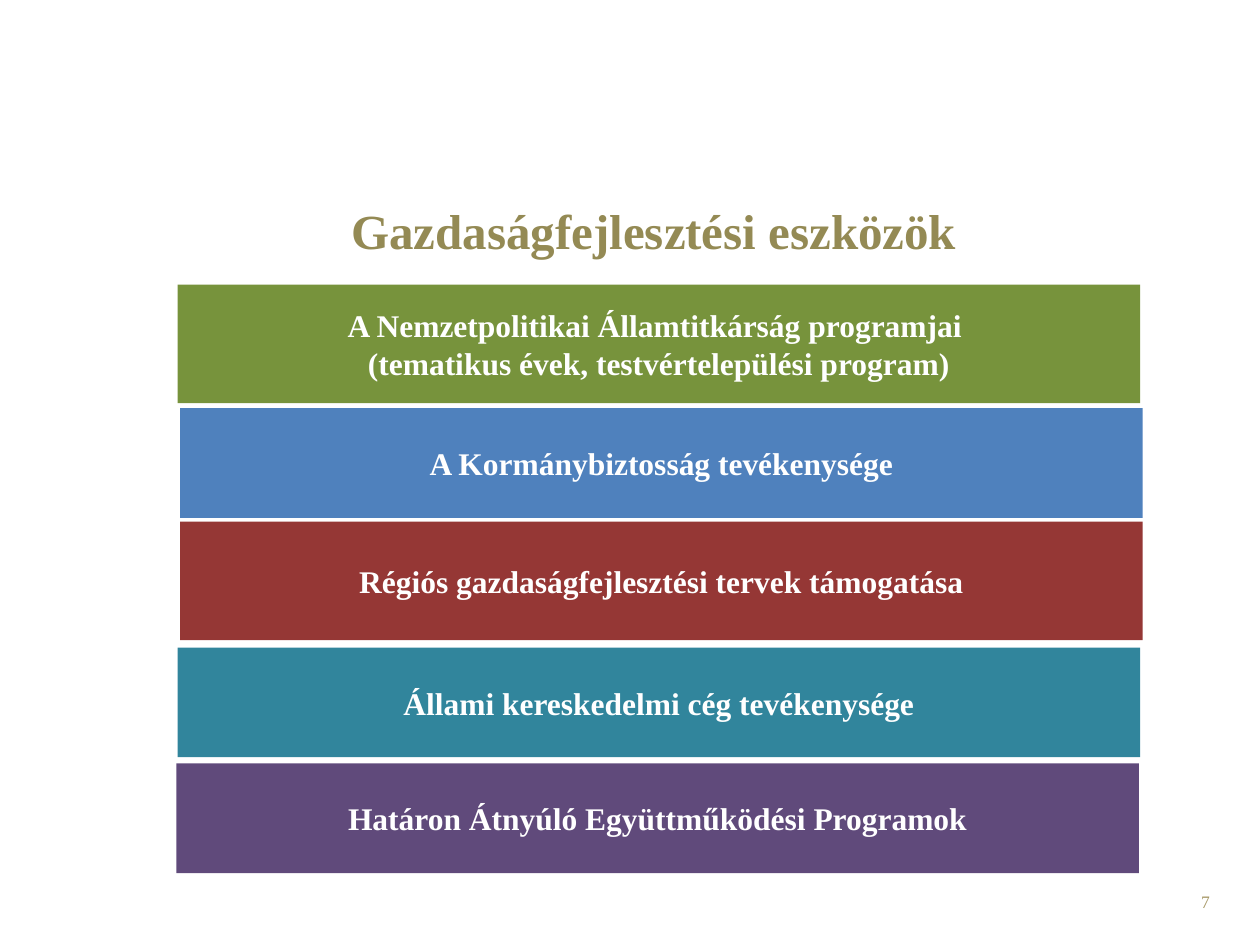
import pptx
import pptx.util
import pptx.dml.color
import pptx.enum.shapes
import pptx.enum.text

Inches = pptx.util.Inches
RGBColor = pptx.dml.color.RGBColor
ALIGN = pptx.enum.text.PP_ALIGN
ANCHOR = pptx.enum.text.MSO_ANCHOR

WHITE = RGBColor(0xFF, 0xFF, 0xFF)
GREEN = RGBColor(0x77, 0x93, 0x3C)
BLUE = RGBColor(0x4F, 0x81, 0xBD)
RED = RGBColor(0x95, 0x37, 0x35)
TEAL = RGBColor(0x31, 0x85, 0x9C)
PURPLE = RGBColor(0x60, 0x4A, 0x7B)
OLIVE = RGBColor(0x94, 0x8A, 0x54)
TAN = RGBColor(0xA6, 0x97, 0x65)


class Builder:
    font = "Times New Roman"
    bar_width = 7.64

    def __init__(self, s):
        self.s = s

    def fill_text(self, tf, lines, size, color, bold, align):
        tf.word_wrap = True
        for i, line in enumerate(lines):
            p = tf.add_paragraph() if i else tf.paragraphs[0]
            p.alignment = align
            r = p.add_run()
            r.text = line
            r.font.name = self.font
            r.font.size = pptx.util.Pt(size)
            r.font.bold = bold
            r.font.color.rgb = color

    def text(self, x, y, w, h, line, size, color, bold=False, align=ALIGN.CENTER):
        sp = self.s.shapes.add_textbox(Inches(x), Inches(y), Inches(w), Inches(h))
        self.fill_text(sp.text_frame, [line], size, color, bold, align)
        return sp

    def bar(self, x, y, h, color, lines):
        sp = self.s.shapes.add_shape(
            pptx.enum.shapes.MSO_SHAPE.RECTANGLE,
            Inches(x), Inches(y), Inches(self.bar_width), Inches(h))
        sp.shadow.inherit = False
        sp.fill.solid()
        sp.fill.fore_color.rgb = color
        sp.line.fill.background()
        sp.text_frame.vertical_anchor = ANCHOR.MIDDLE
        self.fill_text(sp.text_frame, lines, 18, WHITE, True, ALIGN.CENTER)


def main():
    prs = pptx.Presentation()
    prs.slide_width, prs.slide_height = Inches(10), Inches(7.5)
    b = Builder(prs.slides.add_slide(prs.slide_layouts[6]))

    # Title
    title = b.text(2.16, 1.54, 6.06, 0.57, "Gazdaságfejlesztési eszközök", 28, OLIVE, True)
    title.text_frame.auto_size = pptx.enum.text.MSO_AUTO_SIZE.SHAPE_TO_FIT_TEXT

    # Stacked bars, one per tool: left, top, height, colour, lines
    bars = [
        (1.41, 2.26, 0.94, GREEN, ["A Nemzetpolitikai Államtitkárság programjai ",
                                   "(tematikus évek, testvértelepülési program)"]),
        (1.43, 3.24, 0.87, BLUE, ["A Kormánybiztosság tevékenysége"]),
        (1.43, 4.14, 0.94, RED, ["Régiós gazdaságfejlesztési tervek támogatása"]),
        (1.41, 5.14, 0.87, TEAL, ["Állami kereskedelmi cég tevékenysége"]),
        (1.40, 6.06, 0.87, PURPLE, ["Határon Átnyúló Együttműködési Programok"]),
    ]
    for bar in bars:
        b.bar(*bar)

    # Page number
    b.text(7.37, 7.02, 2.33, 0.4, "7", 10, TAN, align=ALIGN.RIGHT)

    prs.save("out.pptx")


if __name__ == "__main__":
    main()
